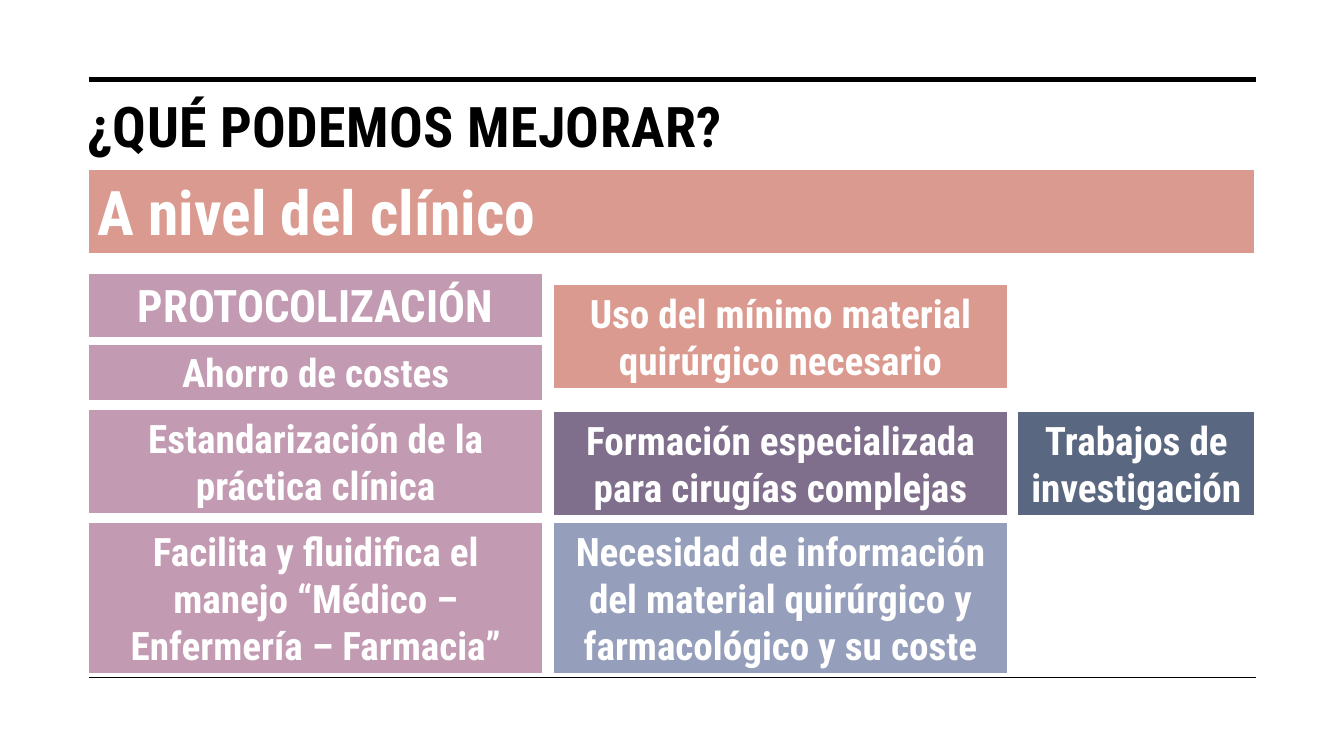
from pptx import Presentation
from pptx.dml.color import RGBColor
from pptx.enum.shapes import MSO_CONNECTOR, MSO_SHAPE
from pptx.enum.text import MSO_ANCHOR, MSO_AUTO_SIZE, PP_ALIGN
from pptx.oxml.ns import qn
from pptx.util import Inches, Pt
from lxml import etree

STRAIGHT = MSO_CONNECTOR.STRAIGHT
RECTANGLE = MSO_SHAPE.RECTANGLE
TOP, MIDDLE = MSO_ANCHOR.TOP, MSO_ANCHOR.MIDDLE
LEFT, CENTER = PP_ALIGN.LEFT, PP_ALIGN.CENTER
GROW = MSO_AUTO_SIZE.SHAPE_TO_FIT_TEXT

BLACK = RGBColor(0x00, 0x00, 0x00)
WHITE = RGBColor(0xFF, 0xFF, 0xFF)
SALMON = RGBColor(0xDB, 0x9A, 0x8F)
MAUVE = RGBColor(0xC2, 0x9A, 0xB1)
PURPLE = RGBColor(0x7F, 0x6E, 0x8C)
PERIWINKLE = RGBColor(0x95, 0x9E, 0xBB)
SLATE = RGBColor(0x59, 0x67, 0x81)

FONT = "Roboto Condensed"
MARGIN, CONTENT_WIDTH = 0.87, 11.58
COLUMN_WIDTH, COLUMN_GAP = 4.52, 0.09
LINE_HEIGHT, PADDING = 0.47, 0.1


def column_left(index):
    return MARGIN + index * (COLUMN_WIDTH + COLUMN_GAP)


def write_text(shape, text, size=28, color=WHITE, align=CENTER, anchor=TOP, spacing=None):
    frame = shape.text_frame
    frame.word_wrap = True
    frame.vertical_anchor = anchor
    para = frame.paragraphs[0]
    para.alignment = align
    span = para.add_run()
    span.text = text
    span.font.name = FONT
    span.font.size = Pt(size)
    span.font.bold = True
    span.font.color.rgb = color
    if spacing is not None:
        span.font._element.set("spc", str(round(spacing * 100)))


def add_rule(page, y, weight):
    rule = page.shapes.add_connector(
        STRAIGHT, Inches(0.88), Inches(y), Inches(12.46), Inches(y))
    rule.line.color.rgb = BLACK
    rule.line.width = Pt(weight)
    etree.SubElement(rule._element.spPr, qn("a:effectLst"))


def add_block(page, box, fill, text, **text_format):
    block = page.shapes.add_shape(RECTANGLE, *map(Inches, box))
    block.shadow.inherit = False
    block.fill.solid()
    block.fill.fore_color.rgb = fill
    block.line.color.rgb = WHITE
    block.line.width = Pt(1.5)
    write_text(block, text, **text_format)
    block.text_frame.auto_size = GROW


def add_header(page):
    title = page.shapes.add_textbox(Inches(0.77), Inches(0.84), Inches(11.69), Inches(0.81))
    write_text(title, "¿QUÉ PODEMOS MEJORAR?", size=40, color=BLACK,
               align=LEFT, anchor=MIDDLE, spacing=0.3)
    add_block(page, (MARGIN, 1.68, CONTENT_WIDTH, 0.84), SALMON,
              "A nivel del clínico", size=44, align=LEFT)


def add_column(page, left, width, blocks):
    """Place blocks of (top, number of text lines, fill, text) in one column."""
    for top, lines, fill, text in blocks:
        height = lines * LINE_HEIGHT + PADDING
        add_block(page, (left, top, width, height), fill, text)


def main():
    deck = Presentation()
    deck.slide_width, deck.slide_height = Inches(13.33), Inches(7.5)
    page = deck.slides.add_slide(deck.slide_layouts[6])

    add_rule(page, 0.79, 3.5)
    add_rule(page, 6.72, 1)
    add_header(page)

    add_block(page, (MARGIN, 2.71, COLUMN_WIDTH, 0.64), MAUVE, "PROTOCOLIZACIÓN", size=32)
    add_column(page, column_left(0), COLUMN_WIDTH, [
        (3.41, 1, MAUVE, "Ahorro de costes"),
        (4.06, 2, MAUVE, "Estandarización de la práctica clínica"),
        (5.18, 3, MAUVE, "Facilita y fluidifica el manejo “Médico – Enfermería – Farmacia”"),
    ])
    add_column(page, column_left(1), COLUMN_WIDTH, [
        (2.82, 2, SALMON, "Uso del mínimo material quirúrgico necesario"),
        (4.08, 2, PURPLE, "Formación especializada para cirugías complejas"),
        (5.18, 3, PERIWINKLE,
         "Necesidad de información del material quirúrgico y farmacológico y su coste"),
    ])
    last_left = column_left(2)
    add_column(page, last_left, MARGIN + CONTENT_WIDTH - last_left, [
        (4.08, 2, SLATE, "Trabajos de investigación"),
    ])
    deck.save("out.pptx")


if __name__ == "__main__":
    main()
